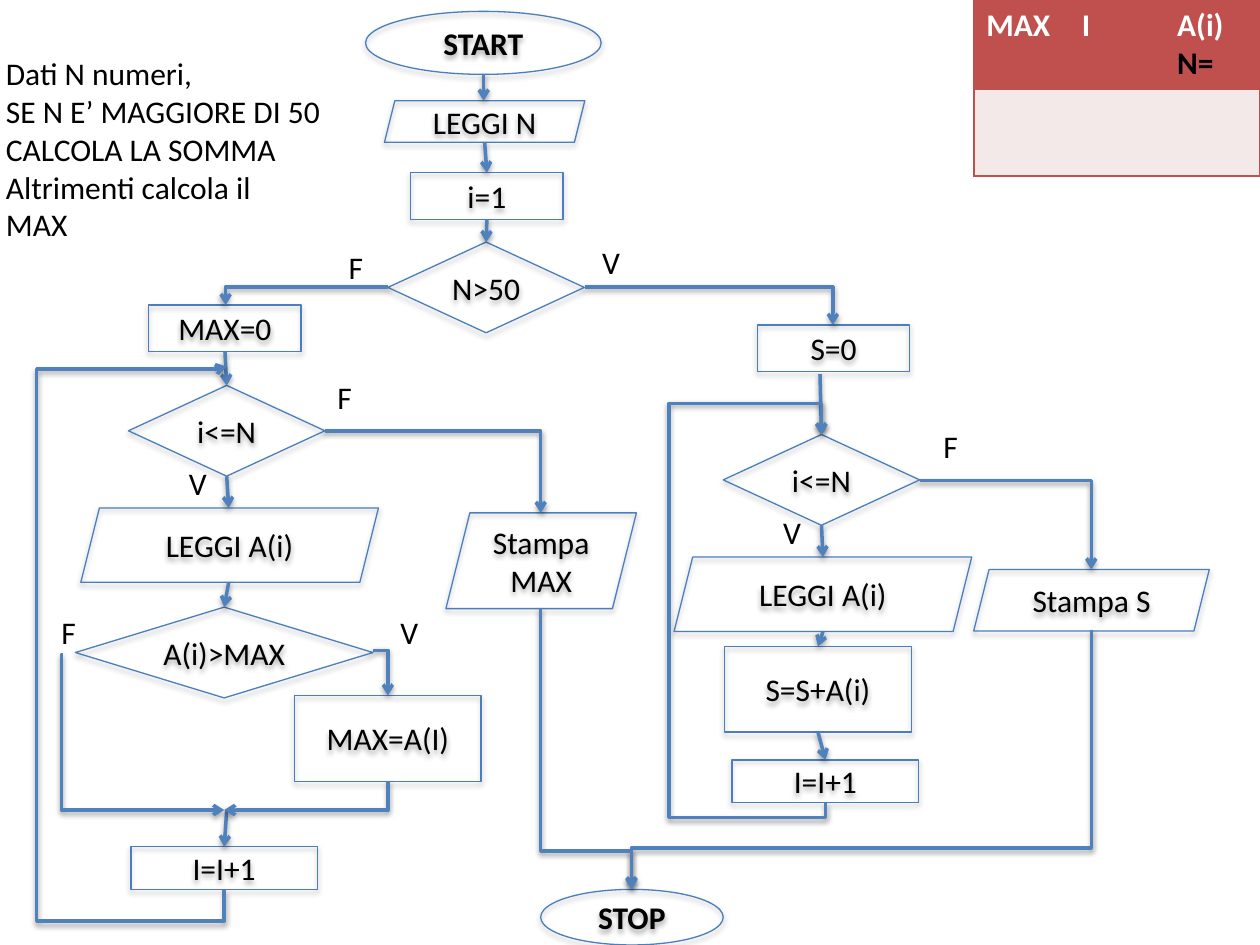
"""Build the flowchart slide that sums N numbers or finds their maximum."""
from lxml.etree import SubElement
from pptx import Presentation
from pptx.dml.color import RGBColor
from pptx.enum.shapes import MSO_CONNECTOR, MSO_SHAPE
from pptx.enum.text import MSO_ANCHOR, PP_ALIGN
from pptx.oxml.ns import qn
from pptx.util import Cm, Pt

COLORS = {"outline": "4B7EBC", "arrow": "4F81BD", "text": "000000",
          "white": "FFFFFF", "header": "C0504D", "body": "F4E9E9"}
OVAL, BOX = MSO_SHAPE.OVAL, MSO_SHAPE.RECTANGLE
TEST, DATA = MSO_SHAPE.DIAMOND, MSO_SHAPE.PARALLELOGRAM


def rgb(name):
    return RGBColor.from_string(COLORS[name])


class Flowchart:
    font, size = "Calibri", Pt(18)

    def __init__(self, s):
        self.s = s

    def format(self, p, color="text", bold=False):
        for r in p.runs:
            r.font.name, r.font.size, r.font.bold = self.font, self.size, bold
            r.font.color.rgb = rgb(color)

    def shadow(self, sp, dist, alpha):
        effects = SubElement(sp._element.spPr, qn("a:effectLst"))
        outer = SubElement(effects, qn("a:outerShdw"), blurRad="40000",
                           dist=str(dist), dir="5400000", rotWithShape="0")
        color = SubElement(outer, qn("a:srgbClr"), val=COLORS["text"])
        SubElement(color, qn("a:alpha"), val=str(alpha * 1000))

    def node(self, kind, text, x, y, w, h):
        sp = self.s.shapes.add_shape(kind, Cm(x), Cm(y), Cm(w), Cm(h))
        sp.fill.background()
        sp.line.color.rgb, sp.line.width = rgb("outline"), Pt(0.75)
        self.shadow(sp, 23000, 35)
        tf = sp.text_frame
        tf.word_wrap, tf.vertical_anchor = True, MSO_ANCHOR.MIDDLE
        p = tf.paragraphs[0]
        p.text, p.alignment = text, PP_ALIGN.CENTER
        self.format(p, bold=kind == OVAL)
        return sp

    def label(self, text, x, y, w=0.85, h=1.02):
        tf = self.s.shapes.add_textbox(Cm(x), Cm(y), Cm(w), Cm(h)).text_frame
        tf.text, tf.word_wrap = text, False
        for p in tf.paragraphs:
            self.format(p)

    def style_arrow(self, cxn):
        cxn.line.color.rgb, cxn.line.width = rgb("arrow"), Pt(2)
        SubElement(cxn.line._get_or_add_ln(), qn("a:tailEnd"), type="arrow")
        self.shadow(cxn, 20000, 38)

    def arrow(self, start, end):
        """Draw a straight arrow between points, or from a node's bottom to a node's top."""
        ends = [v if isinstance(v, tuple) else (0, 0) for v in (start, end)]
        cxn = self.s.shapes.add_connector(
            MSO_CONNECTOR.STRAIGHT, *(Cm(v) for point in ends for v in point))
        if not isinstance(start, tuple):
            cxn.begin_connect(start, 2)
        if not isinstance(end, tuple):
            cxn.end_connect(end, 0)
        self.style_arrow(cxn)

    def elbow(self, *points):
        """Draw a bent arrow through the points, turning its box if it starts vertically."""
        first, last = points[0], points[-1]
        delta = [b - a for a, b in zip(first, last)]
        vertical = points[1][0] == first[0]
        major, minor = (1, 0) if vertical else (0, 1)
        w, h = abs(delta[major]), abs(delta[minor])
        x = (first[0] + last[0] - w) / 2
        y = (first[1] + last[1] - h) / 2
        cxn = self.s.shapes.add_connector(
            MSO_CONNECTOR.ELBOW, Cm(x), Cm(y), Cm(x + w), Cm(y + h))
        xfrm = cxn._element.spPr.find(qn("a:xfrm"))
        if vertical:
            xfrm.set("rot", "5400000")
        xfrm.set("flipH", str(int(delta[major] < 0)))
        xfrm.set("flipV", str(int((delta[minor] < 0) != vertical)))
        geom = cxn._element.spPr.find(qn("a:prstGeom"))
        geom.set("prst", f"bentConnector{len(points) - 1}")
        guides = geom.find(qn("a:avLst"))
        for i in range(1, len(points) - 2):
            axis = major if i % 2 else minor
            ratio = (points[i][axis] - first[axis]) / delta[axis]
            SubElement(guides, qn("a:gd"), name=f"adj{i}",
                       fmla=f"val {round(ratio * 100000)}")
        self.style_arrow(cxn)

    def border(self, cell, side, visible):
        ln = SubElement(cell._tc.get_or_add_tcPr(), qn(f"a:ln{side}"), w="12700")
        if visible:
            fill = SubElement(ln, qn("a:solidFill"))
            SubElement(fill, qn("a:srgbClr"), val=COLORS["header"])
        else:
            SubElement(ln, qn("a:noFill"))

    def table(self, headers, x, y, w, heights):
        cols = len(headers)
        table = self.s.shapes.add_table(len(heights), cols, Cm(x), Cm(y),
                                        Cm(w), Cm(sum(heights))).table
        for i, height in enumerate(heights):
            table.rows[i].height = Cm(height)
            for j, header in enumerate(headers):
                cell = table.cell(i, j)
                for side, visible in (("L", j == 0), ("R", j == cols - 1),
                                      ("T", True), ("B", True)):
                    self.border(cell, side, visible)
                cell.fill.solid()
                cell.fill.fore_color.rgb = rgb("body" if i else "header")
                if i == 0:
                    cell.text_frame.text = header
                    for p in cell.text_frame.paragraphs:
                        self.format(p, "text" if p.text == "N=" else "white", True)


def main():
    prs = Presentation()
    prs.slide_width, prs.slide_height = Cm(25.4), Cm(19.05)
    chart = Flowchart(prs.slides.add_slide(prs.slide_layouts[6]))
    node, arrow, elbow = chart.node, chart.arrow, chart.elbow

    chart.table(["MAX", "I", "A(i)\nN="], 19.63, 0, 5.77, [1.74, 1.74])
    chart.label("Dati N numeri,\nSE N E’ MAGGIORE DI 50\nCALCOLA LA SOMMA\n"
                "Altrimenti calcola il\nMAX", -0.13, 0.97, 6.91, 4.11)

    node(OVAL, "START", 7.37, 0.23, 4.75, 1.27)
    node(DATA, "LEGGI N", 7.75, 2.03, 4.04, 0.84)
    init = node(BOX, "i=1", 8.28, 3.48, 3.07, 0.94)
    choice = node(TEST, "N>50", 7.82, 4.88, 3.96, 1.83)
    node(OVAL, "STOP", 10.9, 17.93, 3.68, 1.12)

    max_init = node(BOX, "MAX=0", 3, 6.15, 3.07, 0.94)
    max_loop = node(TEST, "i<=N", 2.59, 7.77, 3.96, 1.83)
    node(DATA, "LEGGI A(i)", 1.63, 10.24, 6, 1.5)
    compare = node(TEST, "A(i)>MAX", 1.52, 12.24, 6, 1.83)
    node(BOX, "MAX=A(I)", 5.94, 14.02, 3.76, 1.73)
    max_next = node(BOX, "I=I+1", 2.64, 17.07, 3.76, 0.86)
    node(DATA, "Stampa MAX", 8.99, 10.34, 3.84, 1.93)

    node(BOX, "S=0", 15.27, 6.55, 3.07, 0.94)
    sum_loop = node(TEST, "i<=N", 14.58, 8.76, 3.96, 1.83)
    node(DATA, "LEGGI A(i)", 13.59, 11.23, 6, 1.5)
    add = node(BOX, "S=S+A(i)", 14.61, 13.03, 3.76, 1.73)
    sum_next = node(BOX, "I=I+1", 14.76, 15.32, 3.76, 0.86)
    node(DATA, "Stampa S", 19.63, 11.48, 4.75, 1.24)

    for start, end in (
            ((9.75, 1.5), (9.75, 2.03)), ((9.77, 2.87), init), (init, choice),
            (max_init, max_loop), (max_loop, (4.61, 10.24)),
            ((4.61, 11.74), compare), ((4.57, 16.33), max_next),
            ((16.53, 7.54), sum_loop), (sum_loop, (16.59, 11.23)),
            ((16.59, 12.73), add), (add, sum_next)):
        arrow(start, end)

    elbow((7.82, 5.79), (4.55, 5.79), (4.55, 6.15))
    elbow((11.79, 5.79), (16.79, 5.79), (16.79, 6.55))
    elbow((6.55, 8.69), (10.9, 8.69), (10.9, 10.34))
    elbow((18.54, 9.69), (22, 9.69), (22, 11.48))
    elbow((7.52, 13.11), (7.82, 13.11), (7.82, 14.02))
    elbow((7.82, 15.75), (7.82, 16.33), (4.52, 16.33))
    elbow((1.27, 13.21), (1.24, 13.21), (1.24, 16.33), (4.52, 16.33))
    elbow((4.52, 17.93), (4.52, 18.57), (0.74, 18.57),
          (0.74, 7.44), (4.57, 7.44), (4.57, 7.39))
    elbow((16.64, 16.18), (16.64, 16.48), (13.49, 16.48),
          (13.49, 8.13), (16.56, 8.13), (16.56, 8.76))
    elbow((22, 12.7), (22, 17.09), (12.73, 17.09), (12.73, 17.91))
    elbow((10.9, 12.25), (10.9, 17.15), (12.73, 17.15), (12.73, 17.93))

    for text, x, y in (("F", 6.78, 4.88), ("V", 11.89, 4.78),
                       ("F", 6.55, 7.49), ("V", 3.56, 9.22),
                       ("F", 0.99, 12.24), ("V", 7.82, 12.24),
                       ("F", 18.77, 8.48), ("V", 15.54, 10.21)):
        chart.label(text, x, y)

    prs.save("out.pptx")


if __name__ == "__main__":
    main()
